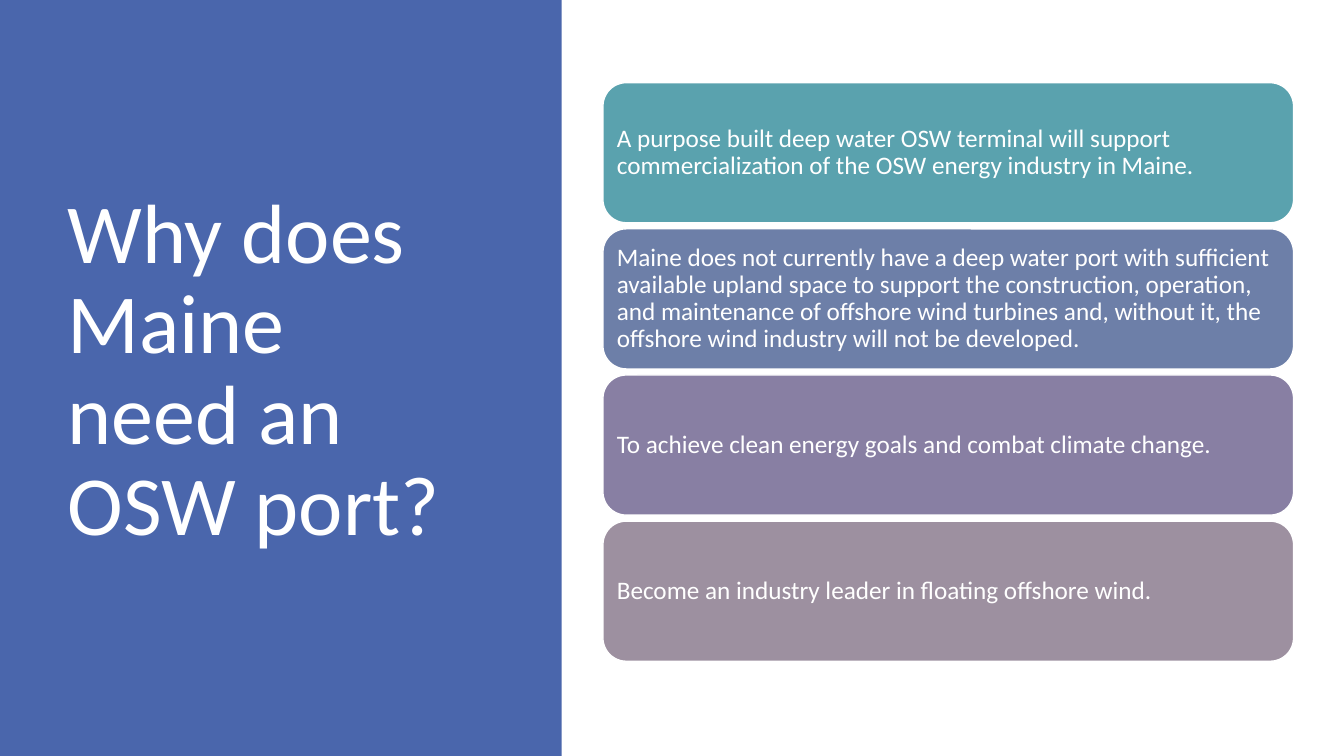
from pptx import Presentation
from pptx.dml.color import RGBColor
from pptx.enum.shapes import MSO_SHAPE
from pptx.enum.text import MSO_ANCHOR, MSO_AUTO_SIZE, PP_ALIGN
from pptx.util import Inches, Pt

WIDTH, HEIGHT = 13.33, 7.5
COLORS = {
    "white": "FFFFFF",
    "panel": "4A66AC",
    "teal": "5AA2AE",
    "blue": "6D7FA8",
    "purple": "887FA3",
    "mauve": "9D90A0",
}
QUESTION = "Why does Maine need an OSW port?"
REASONS = [
    ("teal", "A purpose built deep water OSW terminal will support "
             "commercialization of the OSW energy industry in Maine."),
    ("blue", "Maine does not currently have a deep water port with sufficient "
             "available upland space to support the construction, operation, "
             "and maintenance of offshore wind turbines and, without it, the "
             "offshore wind industry will not be developed."),
    ("purple", "To achieve clean energy goals and combat climate change."),
    ("mauve", "Become an industry leader in floating offshore wind."),
]
# Reasons column: one card per row
CARD_LEFT, CARD_TOP = 5.98, 0.82
CARD_WIDTH, CARD_HEIGHT = 6.85, 1.39
ROW_PITCH = 1.45
CARD_INSET = 0.07


class SlideBuilder:
    font = "Calibri"
    line_spacing = 0.9

    def __init__(self, slide):
        self.slide = slide

    def color(self, name):
        return RGBColor.from_string(COLORS[name])

    def add_text(self, shape, text, size):
        frame = shape.text_frame
        frame.word_wrap = True
        frame.auto_size = MSO_AUTO_SIZE.NONE
        frame.vertical_anchor = MSO_ANCHOR.MIDDLE
        paragraph = frame.paragraphs[0]
        paragraph.alignment = PP_ALIGN.LEFT
        paragraph.line_spacing = self.line_spacing
        run = paragraph.add_run()
        run.text = text
        run.font.name = self.font
        run.font.size = Pt(size)
        run.font.color.rgb = self.color("white")

    def block(self, preset, box, fill):
        shape = self.slide.shapes.add_shape(preset, *map(Inches, box))
        shape.shadow.inherit = False
        shape.fill.solid()
        shape.fill.fore_color.rgb = self.color(fill)
        return shape

    def panel(self, box):
        """Add the colour panel behind the title."""
        panel = self.block(MSO_SHAPE.RECTANGLE, box, "panel")
        panel.line.fill.background()
        self.slide.shapes.title.element.addprevious(panel.element)

    def title(self, box, text):
        title = self.slide.shapes.title
        title.left, title.top, title.width, title.height = map(Inches, box)
        self.add_text(title, text, 60)

    def card(self, row, fill, text):
        top = CARD_TOP + row * ROW_PITCH
        card = self.block(MSO_SHAPE.ROUNDED_RECTANGLE,
                          (CARD_LEFT, top, CARD_WIDTH, CARD_HEIGHT), fill)
        card.line.color.rgb = self.color("white")
        card.line.width = Pt(1)
        frame = card.text_frame
        frame.margin_left = frame.margin_right = Inches(CARD_INSET)
        frame.margin_top = frame.margin_bottom = Inches(CARD_INSET)
        self.add_text(card, text, 18)


def main():
    presentation = Presentation()
    presentation.slide_width = Inches(WIDTH)
    presentation.slide_height = Inches(HEIGHT)
    title_only = presentation.slide_layouts[5]
    builder = SlideBuilder(presentation.slides.add_slide(title_only))
    builder.panel((0, 0, 5.57, HEIGHT))
    builder.title((0.57, 0.68, 4.16, 6.02), QUESTION)
    for row, (fill, reason) in enumerate(REASONS):
        builder.card(row, fill, reason)
    presentation.save("out.pptx")


if __name__ == "__main__":
    main()
